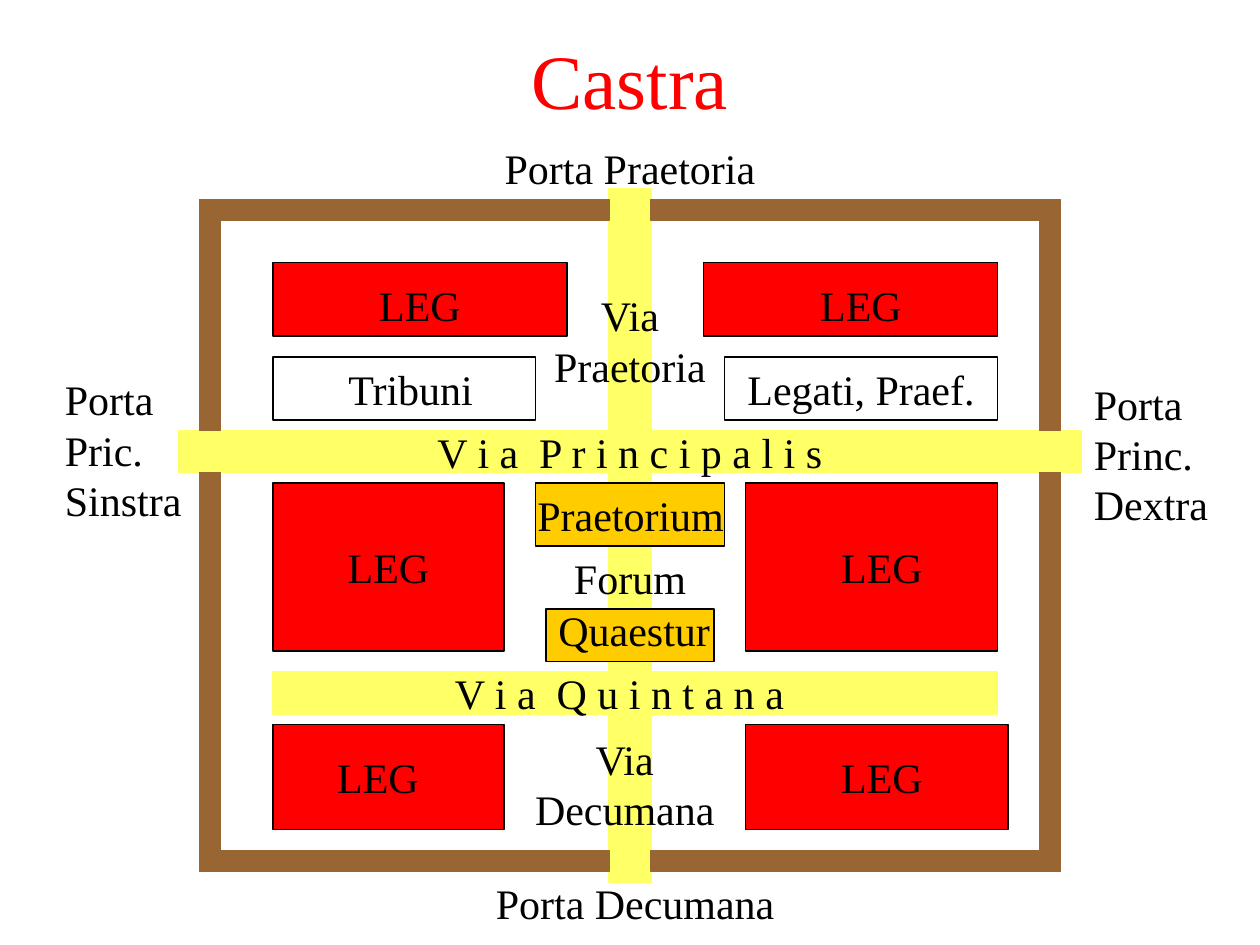
from dataclasses import dataclass
from itertools import product

from pptx import Presentation
from pptx import util as u
from pptx.dml.color import RGBColor
from pptx.enum import shapes, text

RED = RGBColor(0xFF, 0x00, 0x00)
GOLD = RGBColor(0xFF, 0xCC, 0x00)
ROAD = RGBColor(0xFF, 0xFF, 0x66)
WALL = RGBColor(0x99, 0x66, 0x33)
BLACK = RGBColor(0x00, 0x00, 0x00)
FONT = "Times New Roman"
MID = text.PP_ALIGN.CENTER
LEFT = text.PP_ALIGN.LEFT


@dataclass
class Block:
    x: float
    y: float
    w: float
    h: float
    fill: RGBColor | None
    line: RGBColor = BLACK


@dataclass
class Label:
    words: str
    x: float
    y: float
    w: float
    h: float = 36
    align: text.PP_ALIGN = MID


def place(shape, x: float, y: float, w: float, h: float) -> None:
    shape.left, shape.top = u.Pt(x), u.Pt(y)
    shape.width, shape.height = u.Pt(w), u.Pt(h)


def write(frame, words: str, *, size=24, color=BLACK, align=MID,
          anchor=text.MSO_ANCHOR.TOP) -> None:
    frame.word_wrap = True
    frame.vertical_anchor = anchor
    para = frame.paragraphs[0]
    para.alignment = align
    run = para.add_run()
    run.text = words
    run.font.name, run.font.size = FONT, u.Pt(size)
    run.font.color.rgb = color


def draw_block(slide, b: Block) -> None:
    rect = slide.shapes.add_shape(
        shapes.MSO_SHAPE.RECTANGLE, u.Pt(b.x), u.Pt(b.y), u.Pt(b.w), u.Pt(b.h))
    rect.shadow.inherit = False
    if b.fill is None:
        rect.fill.background()
    else:
        rect.fill.solid()
        rect.fill.fore_color.rgb = b.fill
    rect.line.color.rgb = b.line
    rect.line.width = u.Pt(0.75)


def draw_label(slide, l: Label) -> None:
    box = slide.shapes.add_textbox(
        u.Pt(l.x), u.Pt(l.y), u.Pt(l.w), u.Pt(l.h))
    write(box.text_frame, l.words, align=l.align)


# Roads: Principalis, Praetoria, Decumana, Quintana
ROADS = [Block(*at, ROAD, ROAD) for at in (
    (102, 246, 516, 24), (348, 108, 24, 276),
    (348, 402, 24, 102), (156, 384, 414, 24))]

# Walls, with a gate in the middle of each side
WALLS = [Block(x, y, 12, h, WALL, WALL)
         for x, (y, h) in product((114, 594), ((126, 120), (270, 216)))]
WALLS += [Block(x, y, 234, 12, WALL, WALL)
          for x, y in product((114, 372), (114, 486))]

# Buildings: the centre, the legions, the officers
HOUSES = [
    Block(306, 276, 108, 36, GOLD),
    Block(312, 348, 96, 30, GOLD),
    Block(156, 276, 132, 96, RED),
    Block(426, 276, 144, 96, RED),
    Block(156, 414, 132, 60, RED),
    Block(426, 414, 150, 60, RED),
    Block(156, 150, 168, 42, RED),
    Block(402, 150, 168, 42, RED),
    Block(156, 204, 150, 36, None),
    Block(414, 204, 156, 36, None),
]

LABELS = [
    Label("Praetorium", 300, 276, 132, align=LEFT),
    Label("Tribuni", 192, 204, 156, align=LEFT),
    Label("Quaestur", 312, 342, 102, align=LEFT),
    Label("V i a  P r i n c i p a l i s", 162, 240, 396),
    Label("V i a  Q u i n t a n a", 162, 378, 384),
    Label("Forum", 264, 312, 192),
    Label("Porta Praetoria", 276, 78, 168),
    Label("Porta Pric. Sinstra", 30, 210, 102, 94, LEFT),
    Label("Porta Princ. Dextra", 618, 212.5, 102, 94, LEFT),
    Label("Porta Decumana", 240, 498, 246),
    Label("Via Praetoria", 306, 162, 108, 65),
    Label("Via Decumana", 294, 415.5, 126, 65),
    Label("Legati, Praef.", 420, 204, 156, align=LEFT),
]
LABELS += [Label("LEG", x, y, 108) for x, y in (
    (186, 156), (438, 156), (168, 306), (450, 306), (450, 426), (162, 426))]


def main() -> None:
    deck = Presentation()
    deck.slide_width, deck.slide_height = u.Pt(720), u.Pt(540)
    slide = deck.slides.add_slide(deck.slide_layouts[5])

    title = slide.shapes.title
    place(title, 54, 0, 612, 90)
    write(title.text_frame, "Castra", size=44, color=RED,
          anchor=text.MSO_ANCHOR.MIDDLE)

    for block in ROADS + WALLS + HOUSES:
        draw_block(slide, block)
    for label in LABELS:
        draw_label(slide, label)

    deck.save("out.pptx")


if __name__ == "__main__":
    main()
